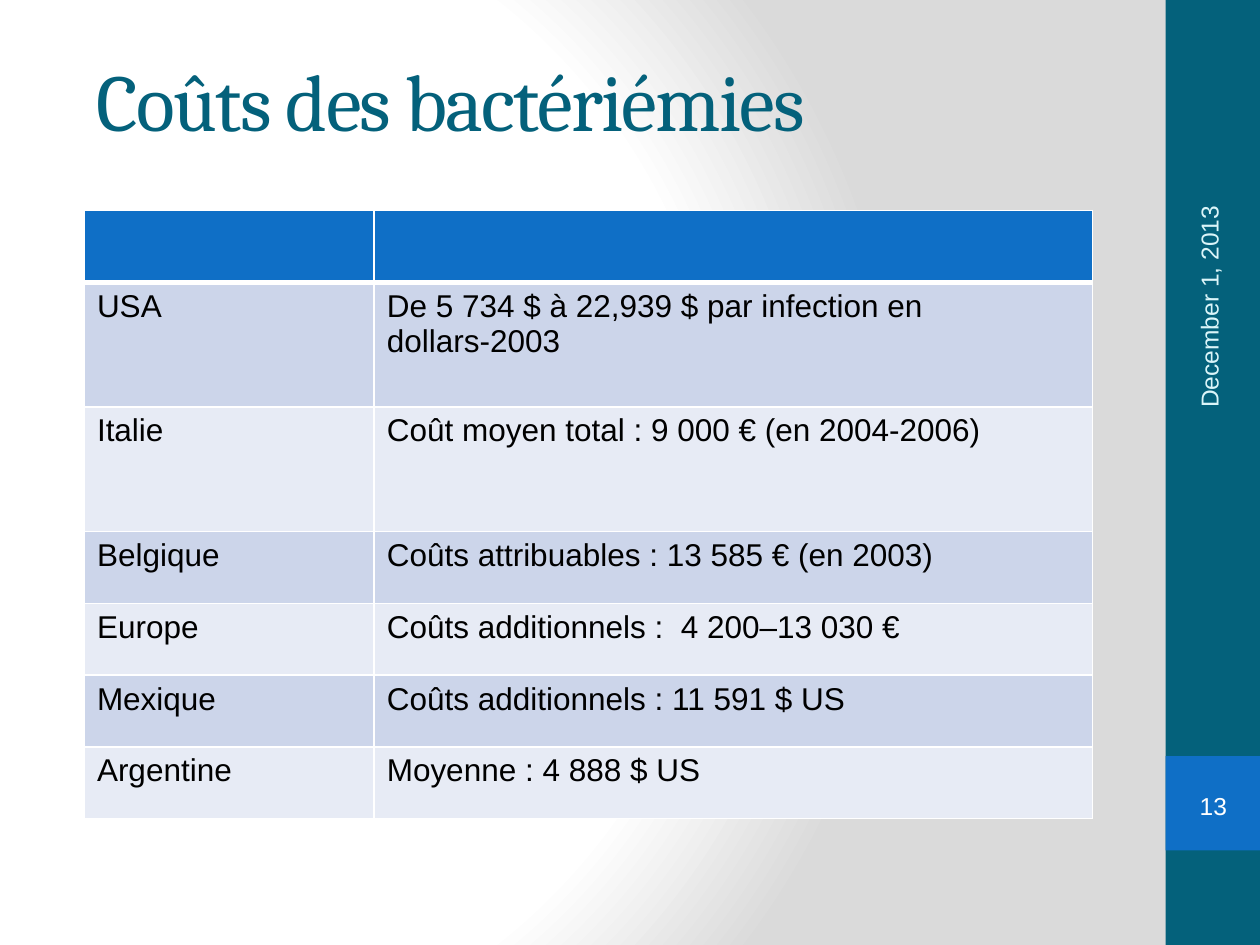
from dataclasses import dataclass

from lxml.etree import SubElement
from pptx import Presentation
from pptx.dml.color import RGBColor
from pptx.enum.shapes import MSO_SHAPE
from pptx.enum.text import MSO_ANCHOR, PP_ALIGN
from pptx.oxml import parse_xml
from pptx.oxml.ns import nsdecls, qn
from pptx.util import Inches, Pt


@dataclass(frozen=True)
class Theme:
    teal: str = "04617B"
    blue: str = "0F6FC6"
    pale_blue: str = "DBF5F9"
    band_dark: str = "CCD5EA"
    band_light: str = "E7EBF5"
    white: str = "FFFFFF"
    gray: str = "DADADA"
    black: str = "000000"
    heading_font: str = "Cambria"
    body_font: str = "Arial"
    title_size: int = 46
    table_size: int = 18
    footer_size: int = 14


THEME = Theme()

COSTS = [
    ("USA", "De 5 734 $ à 22,939 $ par infection en dollars-2003"),
    ("Italie", "Coût moyen total : 9 000 € (en 2004-2006)"),
    ("Belgique", "Coûts attribuables : 13 585 € (en 2003)"),
    ("Europe", "Coûts additionnels :  4 200–13 030 €"),
    ("Mexique", "Coûts additionnels : 11 591 $ US"),
    ("Argentine", "Moyenne : 4 888 $ US"),
]
COLUMN_WIDTHS = [2.3, 5.7]
ROW_HEIGHTS = [0.57, 0.99, 0.99, 0.57, 0.57, 0.57, 0.57]


def style_font(paragraph, size, color, name=THEME.body_font):
    font = paragraph.font
    font.size = Pt(size)
    font.name = name
    font.color.rgb = RGBColor.from_string(color)


def add_background(slide):
    """Radial gradient, white at the left and gray towards the right."""
    slide.background.fill.gradient()
    gradient = slide.element.find(".//" + qn("a:gradFill"))
    stops = [(0, THEME.white), (75, THEME.white), (100, THEME.gray)]
    stop_xml = "".join(
        f'<a:gs pos="{position * 1000}"><a:srgbClr val="{color}"/></a:gs>'
        for position, color in stops
    )
    radial = parse_xml(
        f'<a:gradFill {nsdecls("a")} rotWithShape="1"><a:gsLst>{stop_xml}</a:gsLst>'
        '<a:path path="circle"><a:fillToRect l="20000" t="50000" r="100000" b="50000"/>'
        "</a:path></a:gradFill>"
    )
    gradient.getparent().replace(gradient, radial)


def add_block(slide, left, top, width, height, color):
    block = slide.shapes.add_shape(
        MSO_SHAPE.RECTANGLE, Inches(left), Inches(top), Inches(width), Inches(height)
    )
    block.shadow.inherit = False
    block.fill.solid()
    block.fill.fore_color.rgb = RGBColor.from_string(color)
    block.line.fill.background()


def add_label(slide, left, top, width, height, text):
    """Middle-anchored text box; returns the box and its paragraph."""
    box = slide.shapes.add_textbox(Inches(left), Inches(top), Inches(width), Inches(height))
    frame = box.text_frame
    frame.word_wrap = True
    frame.vertical_anchor = MSO_ANCHOR.MIDDLE
    paragraph = frame.paragraphs[0]
    paragraph.text = text
    return box, paragraph


def add_title(slide, left, top, width, height):
    _, paragraph = add_label(slide, left, top, width, height, "Coûts des bactériémies")
    style_font(paragraph, THEME.title_size, THEME.teal, THEME.heading_font)
    paragraph.runs[0].font._element.set("spc", "-100")


def add_sidebar(slide, left, top, width, height):
    """Side band with the slide number and the date running upwards."""
    add_block(slide, left, top, width, height, THEME.teal)
    add_block(slide, left, top + 6, width, width, THEME.blue)

    number, paragraph = add_label(slide, left + 0.08, top + 6.18, 0.6, 0.43, "13")
    frame = number.text_frame
    frame.margin_left = frame.margin_right = frame.margin_top = frame.margin_bottom = 0
    paragraph.alignment = PP_ALIGN.CENTER
    style_font(paragraph, THEME.footer_size, THEME.white)

    date, paragraph = add_label(slide, left - 0.99, top + 1.8, 2.67, 0.4, "December 1, 2013")
    date.rotation = 270
    style_font(paragraph, THEME.footer_size, THEME.pale_blue)


def set_borders(cell, bottom_width):
    properties = cell._tc.get_or_add_tcPr()
    widths = {"a:lnL": 1, "a:lnR": 1, "a:lnT": 1, "a:lnB": bottom_width}
    for index, (tag, width) in enumerate(widths.items()):
        line = SubElement(properties, qn(tag), w=str(Pt(width)))
        SubElement(SubElement(line, qn("a:solidFill")), qn("a:srgbClr"), val=THEME.white)
        properties.insert(index, line)


def add_cost_table(slide, left, top, width, height):
    rows = [("", "")] + COSTS
    table = slide.shapes.add_table(
        len(rows), len(COLUMN_WIDTHS), Inches(left), Inches(top), Inches(width), Inches(height)
    ).table
    table.horz_banding = False
    for column, column_width in zip(table.columns, COLUMN_WIDTHS):
        column.width = Inches(column_width)
    for row_index, texts in enumerate(rows):
        table.rows[row_index].height = Inches(ROW_HEIGHTS[row_index])
        is_header = row_index == 0
        band = THEME.band_dark if row_index % 2 else THEME.band_light
        for column_index, text in enumerate(texts):
            cell = table.cell(row_index, column_index)
            cell.fill.solid()
            cell.fill.fore_color.rgb = RGBColor.from_string(THEME.blue if is_header else band)
            set_borders(cell, 3 if is_header else 1)
            paragraph = cell.text_frame.paragraphs[0]
            if text:
                paragraph.text = text
            style_font(paragraph, THEME.table_size, THEME.black)


def main():
    presentation = Presentation()
    presentation.slide_width = Inches(10)
    presentation.slide_height = Inches(7.5)
    slide = presentation.slides.add_slide(presentation.slide_layouts[6])
    add_background(slide)
    add_sidebar(slide, 9.25, 0, 0.75, 7.5)
    add_title(slide, 0.67, 0.25, 8.67, 1.08)
    add_cost_table(slide, 0.67, 1.67, 8, 4.83)
    presentation.save("out.pptx")


if __name__ == "__main__":
    main()
